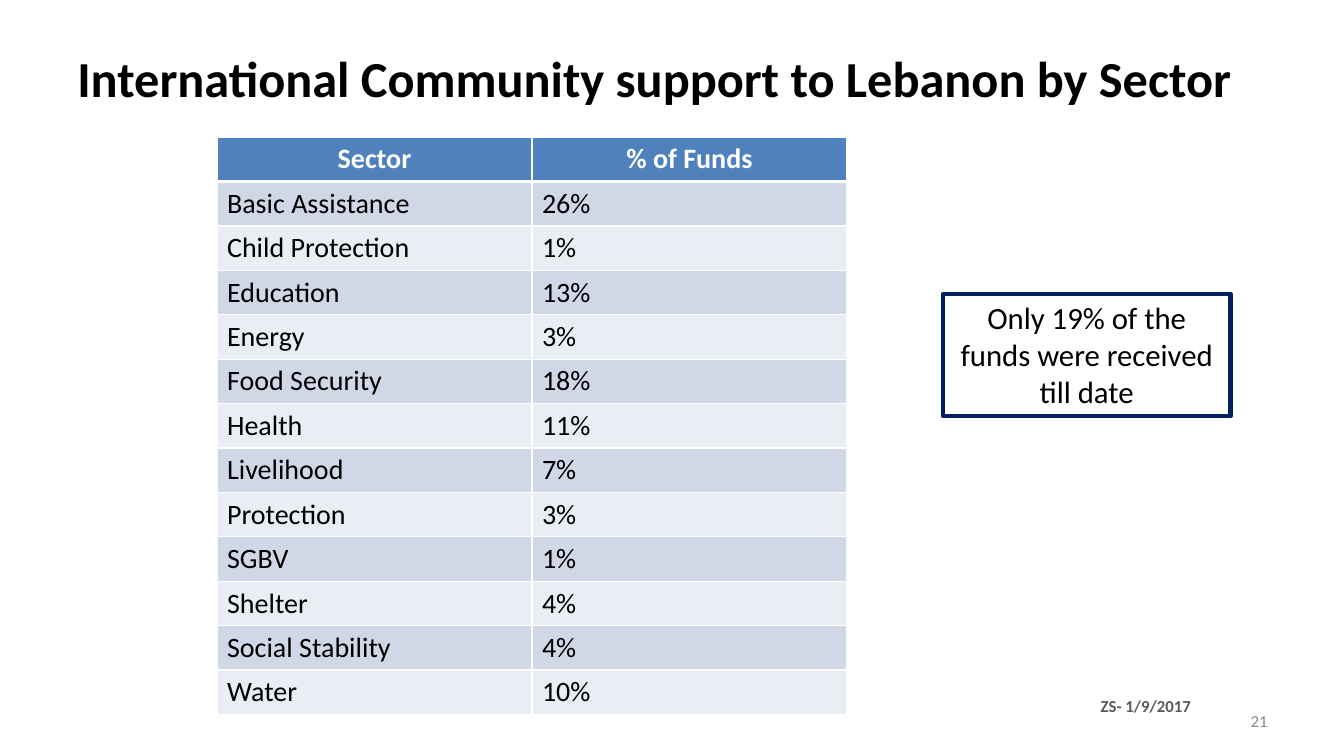
import pptx
import pptx.util
import pptx.dml.color
import pptx.enum.shapes
import pptx.enum.text
import pptx.oxml
import pptx.oxml.ns

Pt = pptx.util.Pt
RGBColor = pptx.dml.color.RGBColor
ALIGN = pptx.enum.text.PP_ALIGN
ANCHOR = pptx.enum.text.MSO_ANCHOR
AUTO_SIZE = pptx.enum.text.MSO_AUTO_SIZE

WHITE = RGBColor(0xFF, 0xFF, 0xFF)
BLACK = RGBColor(0x00, 0x00, 0x00)
BLUE = RGBColor(0x4F, 0x81, 0xBD)
BAND_DARK = RGBColor(0xD0, 0xD8, 0xE8)
BAND_LIGHT = RGBColor(0xE9, 0xED, 0xF4)
NAVY = RGBColor(0x00, 0x20, 0x60)
GRAY = RGBColor(0x89, 0x89, 0x89)
DARK_GRAY = RGBColor(0x59, 0x59, 0x59)

FUNDS = [
    ("Sector", "% of Funds"),
    ("Basic Assistance", "26%"),
    ("Child Protection", "1%"),
    ("Education", "13%"),
    ("Energy", "3%"),
    ("Food Security", "18%"),
    ("Health", "11%"),
    ("Livelihood", "7%"),
    ("Protection", "3%"),
    ("SGBV", "1%"),
    ("Shelter", "4%"),
    ("Social Stability", "4%"),
    ("Water", "10%"),
]


def write(tf, text, align, color, **formats):
    p = tf.paragraphs[0]
    p.alignment = align
    r = p.add_run()
    r.text = text
    r.font.color.rgb = color
    for name, value in {"name": "Calibri", "bold": False, **formats}.items():
        setattr(r.font, name, value)


def border_cell(cell, bottom):
    tcPr = cell._tc.get_or_add_tcPr()
    widths = {"lnL": 1, "lnR": 1, "lnT": 1, "lnB": bottom}
    for i, (tag, width) in enumerate(widths.items()):
        ln = pptx.oxml.parse_xml(
            f'<a:{tag} {pptx.oxml.ns.nsdecls("a")} w="{Pt(width)}">'
            f'<a:solidFill><a:srgbClr val="{WHITE}"/></a:solidFill></a:{tag}>'
        )
        tcPr.insert(i, ln)


def add_title(s, box, text):
    sp = s.shapes.title
    sp.left, sp.top, sp.width, sp.height = map(Pt, box)
    tf = sp.text_frame
    tf.auto_size = AUTO_SIZE.NONE
    tf.vertical_anchor = ANCHOR.MIDDLE
    write(tf, text, ALIGN.LEFT, BLACK, size=Pt(36), bold=True)


def add_funds_table(s, box):
    table = s.shapes.add_table(len(FUNDS), len(FUNDS[0]), *map(Pt, box)).table
    for i, row in enumerate(FUNDS):
        header = i == 0
        fill = BLUE if header else (BAND_LIGHT, BAND_DARK)[i % 2]
        for j, text in enumerate(row):
            cell = table.cell(i, j)
            cell.fill.solid()
            cell.fill.fore_color.rgb = fill
            border_cell(cell, 3 if header else 1)
            write(
                cell.text_frame,
                text,
                ALIGN.CENTER if header else ALIGN.LEFT,
                WHITE if header else BLACK,
                size=Pt(20),
                bold=header,
            )


def add_callout(s, box, text):
    sp = s.shapes.add_shape(
        pptx.enum.shapes.MSO_SHAPE.RECTANGLE, *map(Pt, box)
    )
    sp.shadow.inherit = False
    sp.fill.background()
    sp.line.color.rgb = NAVY
    sp.line.width = Pt(3)
    tf = sp.text_frame
    tf.word_wrap = True
    tf.auto_size = AUTO_SIZE.SHAPE_TO_FIT_TEXT
    tf.vertical_anchor = ANCHOR.TOP
    write(tf, text, ALIGN.CENTER, BLACK, size=Pt(22))


def add_footer(s, box, text, align, color, bold):
    tf = s.shapes.add_textbox(*map(Pt, box)).text_frame
    tf.word_wrap = True
    tf.vertical_anchor = ANCHOR.MIDDLE
    write(tf, text, align, color, size=Pt(12), bold=bold)


def build_funding_slide(prs):
    s = prs.slides.add_slide(prs.slide_layouts[5])
    add_funds_table(s, (155, 98, 450, 405.6))
    add_footer(s, (688.5, 500.5, 224, 28.8), "21", ALIGN.RIGHT, GRAY, False)
    add_title(
        s,
        (48, 10, 864, 90),
        "International Community support to Lebanon by Sector",
    )
    add_callout(
        s,
        (673.5, 210, 205.5, 87.3),
        "Only 19% of the funds were received till date",
    )
    add_footer(
        s, (751.5, 489.6, 134, 28.8), "ZS- 1/9/2017", ALIGN.CENTER, DARK_GRAY, True
    )


def main():
    prs = pptx.Presentation()
    prs.slide_width = Pt(960)
    prs.slide_height = Pt(540)
    build_funding_slide(prs)
    prs.save("out.pptx")


if __name__ == "__main__":
    main()
